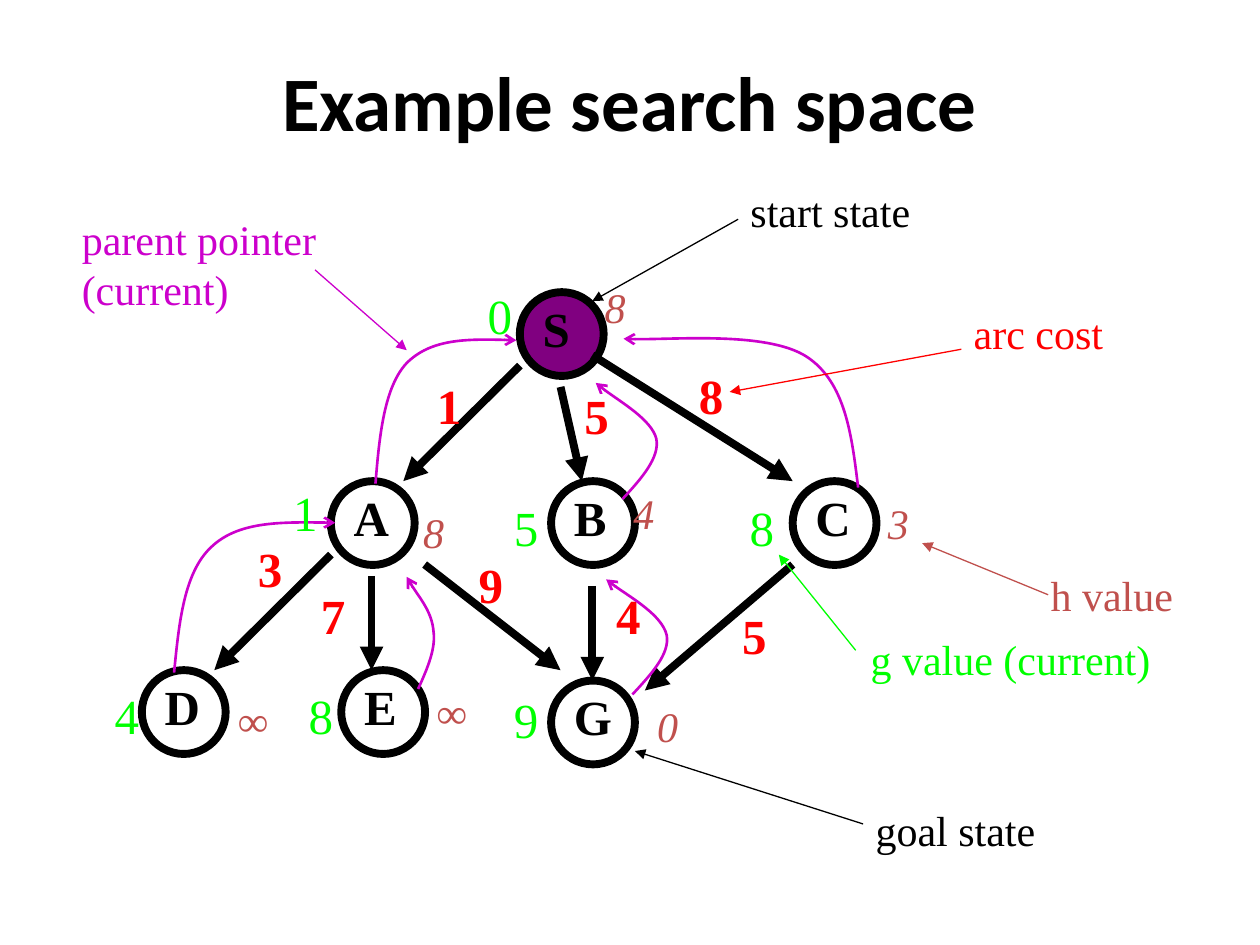
from pptx import Presentation
from pptx.dml.color import RGBColor
from pptx.enum.shapes import MSO_CONNECTOR, MSO_SHAPE
from pptx.enum.text import MSO_ANCHOR, MSO_AUTO_SIZE, PP_ALIGN
from pptx.oxml.ns import qn
from pptx.util import Cm, Pt
from lxml import etree

STRAIGHT = MSO_CONNECTOR.STRAIGHT
OVAL = MSO_SHAPE.OVAL
MIDDLE = MSO_ANCHOR.MIDDLE
FIT_SHAPE = MSO_AUTO_SIZE.SHAPE_TO_FIT_TEXT
CENTER = PP_ALIGN.CENTER

BLACK = RGBColor(0x00, 0x00, 0x00)
PURPLE = RGBColor(0x80, 0x00, 0x80)
MAGENTA = RGBColor(0xCC, 0x00, 0xCC)
RED = RGBColor(0xFF, 0x00, 0x00)
BRICK = RGBColor(0xC0, 0x50, 0x4D)
GREEN = RGBColor(0x00, 0xFF, 0x00)

NODE_SIZE = 1.69

# name, left, top, label width, fill
NODES = [
    ("S", 10.48, 5.89, 1.07, PURPLE),
    ("C", 15.98, 9.7, 1.22, None),
    ("B", 11.11, 9.7, 1.17, None),
    ("A", 6.67, 9.7, 1.22, None),
    ("D", 2.86, 13.51, 1.22, None),
    ("G", 11.11, 13.72, 1.27, None),
    ("E", 6.88, 13.51, 1.17, None),
]
# start, end, cost, position of the cost
ARCS = [
    ((10.48, 7.37), (8.13, 9.7), "1", (8.56, 7.44)),
    ((11.3, 7.8), (11.73, 9.7), "5", (11.53, 7.65)),
    ((11.94, 7.16), (15.98, 9.7), "8", (13.84, 7.24)),
    ((8.56, 11.38), (11.3, 13.51), "9", (9.4, 11.05)),
    ((11.94, 11.81), (11.94, 13.72), "4", (12.17, 11.68)),
    ((15.98, 11.38), (13, 13.92), "5", (14.71, 12.09)),
    ((6.67, 11.18), (4.32, 13.51), "3", (4.95, 10.74)),
    ((7.49, 11.61), (7.49, 13.51), "7", (6.22, 11.68)),
]
H_VALUES = [
    ("8", 11.94, 5.56, 0.94), ("8", 8.28, 10.08, 0.94),
    ("4", 12.52, 9.7, 0.94), ("3", 17.65, 9.91, 0.94),
    ("∞", 8.56, 13.72, 1.12), ("∞", 4.55, 13.87, 1.12),
    ("0", 13, 14, 0.94),
]
G_VALUES = [
    ("0", 9.58, 5.64), ("1", 5.66, 9.6), ("4", 2.06, 13.69),
    ("8", 5.97, 13.69), ("9", 10.11, 13.77), ("8", 14.86, 9.91),
    ("5", 10.11, 9.91),
]
# Start point, then two cubic segments of three points each
PARENT_POINTERS = [
    [(7.57, 9.75), (7.65, 8.76), (7.75, 7.8), (8.2, 7.32),
     (8.69, 6.83), (9.55, 6.83), (10.41, 6.86)],
    [(3.51, 13.56), (3.61, 12.55), (3.71, 11.53), (4.27, 11.02),
     (4.8, 10.52), (5.77, 10.52), (6.76, 10.54)],
    [(8.43, 13.89), (8.61, 13.49), (8.79, 13.08), (8.74, 12.73),
     (8.71, 12.34), (8.28, 11.81), (8.2, 11.63)],
    [(12.75, 14), (13.13, 13.59), (13.51, 13.18), (13.44, 12.8),
     (13.34, 12.4), (12.42, 11.86), (12.22, 11.68)],
    [(12.55, 10.06), (12.93, 9.65), (13.31, 9.22), (13.23, 8.84),
     (13.13, 8.46), (12.22, 7.92), (12.01, 7.72)],
    [(17.3, 9.83), (17.17, 8.76), (17.04, 7.7), (16.26, 7.19),
     (15.47, 6.68), (13.21, 6.88), (12.57, 6.83)],
]
# lines, left, top, width, colour, pointer start, pointer end
LEGEND = [
    (["start state"], 14.88, 3.61, 3.73, BLACK, (14.88, 4.42), (11.94, 6.07)),
    (["goal state"], 17.4, 16.1, 3.73, BLACK, (17.4, 16.61), (12.8, 15.14)),
    (["arc cost"], 19.38, 6.07, 3.12, RED, (19.38, 7.04), (14.71, 7.9)),
    (["h value"], 20.93, 11.35, 2.97, BRICK, (21.13, 11.99), (18.59, 10.95)),
    (["parent pointer", "(current)"], 1.4, 4.17, 5.28, MAGENTA,
     (6.35, 5.44), (8.2, 7.06)),
    (["g value (current)"], 17.3, 12.65, 6.2, GREEN,
     (17.25, 13.11), (15.7, 11.18)),
]


class SearchSlide:
    font = "Times New Roman"
    title_font = "Calibri"

    def __init__(self, s):
        self.s = s

    def style_run(self, r, font, size, color, bold=False, italic=False):
        r.font.name, r.font.size = font, Pt(size)
        r.font.bold, r.font.italic = bold, italic
        r.font.color.rgb = color

    def title(self, text):
        sp = self.s.shapes.title
        sp.left, sp.top, sp.width, sp.height = Cm(1.9), Cm(0.43), Cm(21.59), Cm(3.18)
        tf = sp.text_frame
        tf.vertical_anchor = MIDDLE
        p = tf.paragraphs[0]
        p.alignment = CENTER
        r = p.add_run()
        r.text = text
        self.style_run(r, self.title_font, 44, BLACK, bold=True)

    def text(self, lines, x, y, w, color, size=28, bold=False, italic=False):
        h = size * 0.0425 * len(lines) + 0.25
        sp = self.s.shapes.add_textbox(Cm(x), Cm(y), Cm(w), Cm(h))
        tf = sp.text_frame
        tf.word_wrap = False
        tf.auto_size = FIT_SHAPE
        p = tf.paragraphs[0]
        for i, line in enumerate(lines):
            if i:
                p.add_line_break()
            r = p.add_run()
            r.text = line
            self.style_run(r, self.font, size, color, bold, italic)

    def node(self, name, x, y, label_width, fill):
        sp = self.s.shapes.add_shape(OVAL, Cm(x), Cm(y), Cm(NODE_SIZE), Cm(NODE_SIZE))
        sp.shadow.inherit = False
        if fill is None:
            sp.fill.background()
        else:
            sp.fill.solid()
            sp.fill.fore_color.rgb = fill
        sp.line.color.rgb = BLACK
        sp.line.width = Pt(4.5)
        self.text([name], x + 0.21, y, label_width, BLACK, bold=True)

    def style_arrow(self, sp, color, width, head):
        sp.line.color.rgb = color
        sp.line.width = Pt(width)
        ln = sp._element.spPr.find(qn("a:ln"))
        etree.SubElement(ln, qn("a:tailEnd"), type=head)

    def arrow(self, start, end, color, width):
        points = [Cm(v) for v in start + end]
        cxn = self.s.shapes.add_connector(STRAIGHT, *points)
        self.style_arrow(cxn, color, width, "triangle")
        etree.SubElement(cxn._element.spPr, qn("a:effectLst"))

    def curve(self, points):
        """Draw a freeform whose points after the first are cubic Bézier triples."""
        start, *rest = [(Cm(x), Cm(y)) for x, y in points]
        fb = self.s.shapes.build_freeform(*start)
        fb.add_line_segments(rest, close=False)
        sp = fb.convert_to_shape()
        sp.shadow.inherit = False
        sp.fill.background()
        self.style_arrow(sp, MAGENTA, 1.5, "arrow")
        segments = list(sp._element.iter(qn("a:lnTo")))
        outline = segments[0].getparent()
        for i in range(0, len(segments), 3):
            bezier = etree.SubElement(outline, qn("a:cubicBezTo"))
            for segment in segments[i:i + 3]:
                bezier.append(segment[0])
                outline.remove(segment)


def main():
    prs = Presentation()
    prs.slide_width, prs.slide_height = Cm(25.4), Cm(19.05)
    slide = SearchSlide(prs.slides.add_slide(prs.slide_layouts[5]))

    slide.title("Example search space")
    for node in NODES:
        slide.node(*node)
    for start, end, _, _ in ARCS:
        slide.arrow(start, end, BLACK, 4.5)
    for _, _, cost, (x, y) in ARCS:
        slide.text([cost], x, y, 1.02, RED, bold=True)
    for value, x, y, w in H_VALUES:
        slide.text([value], x, y, w, BRICK, size=24, italic=True)
    for points in PARENT_POINTERS:
        slide.curve(points)
    for lines, x, y, w, color, start, end in LEGEND:
        slide.text(lines, x, y, w, color, size=24)
        slide.arrow(start, end, color, 0.75)
    for value, x, y in G_VALUES:
        slide.text([value], x, y, 1.02, GREEN)

    prs.save("out.pptx")


if __name__ == "__main__":
    main()
